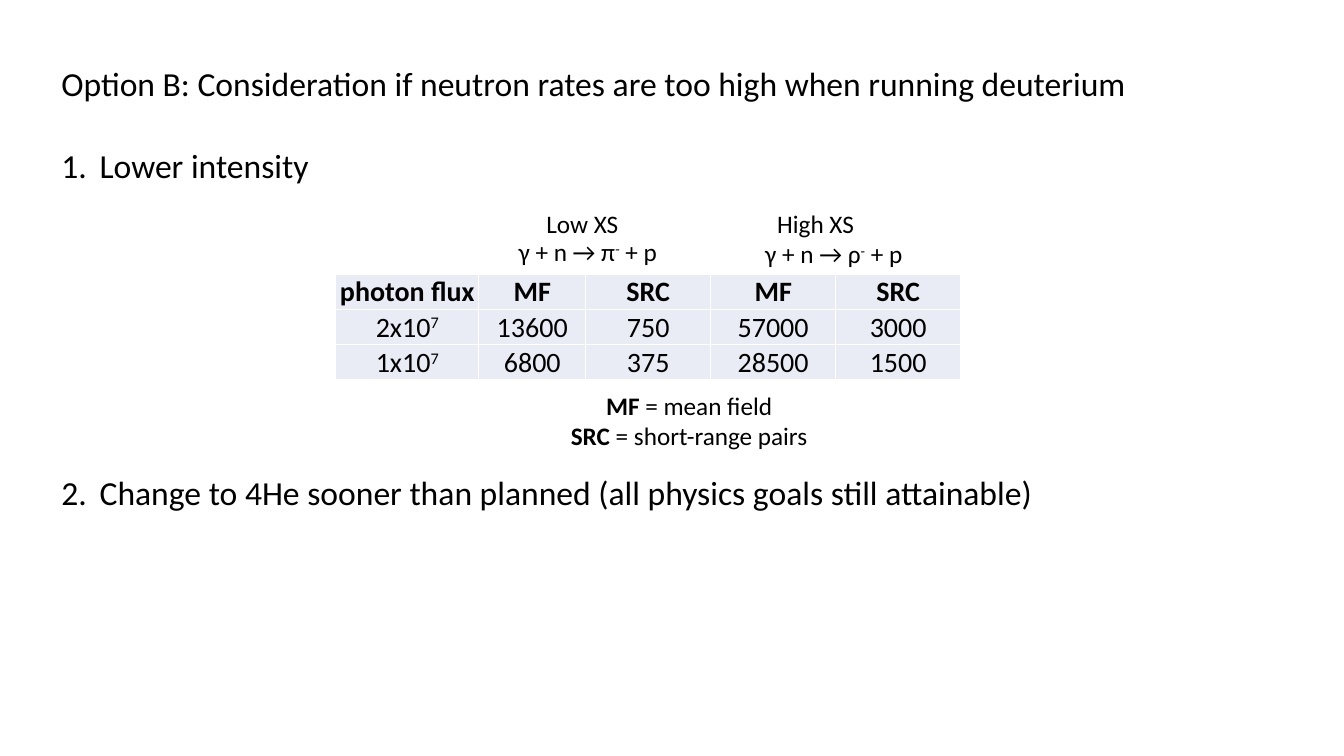
from lxml.etree import SubElement
from pptx import Presentation
from pptx.dml.color import RGBColor
from pptx.enum.text import MSO_ANCHOR, PP_ALIGN
from pptx.oxml.ns import qn
from pptx.util import Inches, Pt

COLORS = {"text": "000000", "cell": "E9EBF5", "border": "FFFFFF"}
FONT = "Calibri"
PLAIN, BOLD, SUPERSCRIPT = "plain", "bold", "superscript"

COLUMN_WIDTHS = [1.42, 1.06, 1.24, 1.24, 1.24]
ROW_HEIGHT = 0.35
RATES = [
    ["photon flux", "MF", "SRC", "MF", "SRC"],
    ["2x10^7", "13600", "750", "57000", "3000"],
    ["1x10^7", "6800", "375", "28500", "1500"],
]


def fill_paragraph(paragraph, runs, size, align=PP_ALIGN.LEFT):
    """Write (text, style) runs in the slide's font."""
    paragraph.alignment = align
    font = paragraph.font
    font.name, font.size = FONT, Pt(size)
    font.color.rgb = RGBColor.from_string(COLORS["text"])
    for text, style in runs:
        run = paragraph.add_run()
        run.text = text
        if style == BOLD:
            run.font.bold = True
        elif style == SUPERSCRIPT:
            run._r.get_or_add_rPr().set("baseline", "30000")


def add_text_box(slide, left, top, width, height, lines, size,
                 align=PP_ALIGN.LEFT, wrap=False):
    """Add one paragraph per list of runs and return the paragraphs."""
    box = slide.shapes.add_textbox(*map(Inches, (left, top, width, height)))
    frame = box.text_frame
    frame.word_wrap = wrap
    for index, runs in enumerate(lines):
        paragraph = frame.add_paragraph() if index else frame.paragraphs[0]
        fill_paragraph(paragraph, runs, size, align)
    return frame.paragraphs


def insert_before_font(paragraph, tag):
    """Add a paragraph property ahead of the default run properties."""
    properties = paragraph._p.get_or_add_pPr()
    element = SubElement(properties, qn(tag))
    properties.find(qn("a:defRPr")).addprevious(element)
    return element


def number_paragraph(paragraph):
    properties = paragraph._p.get_or_add_pPr()
    properties.set("marL", str(Inches(0.38)))
    properties.set("indent", str(-Inches(0.38)))
    insert_before_font(paragraph, "a:buFont").set("typeface", "+mj-lt")
    insert_before_font(paragraph, "a:buAutoNum").set("type", "arabicPeriod")


def set_tab_stop(paragraph, position):
    tab = SubElement(insert_before_font(paragraph, "a:tabLst"), qn("a:tab"))
    tab.set("pos", str(Inches(position)))
    tab.set("algn", "l")


def add_outline(slide):
    lines = [
        "Option B: Consideration if neutron rates are too high when running deuterium",
        "Lower intensity",
        "Change to 4He sooner than planned (all physics goals still attainable)",
    ]
    _, intensity, helium = add_text_box(
        slide, 0.51, 0.58, 10.86, 4.54, [[(line, PLAIN)] for line in lines], 24)
    for paragraph, space in ((intensity, 29.3), (helium, 205)):
        number_paragraph(paragraph)
        paragraph.space_before = Pt(space)


def add_reaction(slide, left, top, meson):
    runs = [("γ + n → " + meson, PLAIN), ("-", SUPERSCRIPT), (" + p", PLAIN)]
    paragraph, = add_text_box(slide, left, top, 1.62, 0.37, [runs], 18,
                              PP_ALIGN.CENTER)
    paragraph.line_spacing = 0.9


def style_cell(cell):
    cell.vertical_anchor = MSO_ANCHOR.MIDDLE
    cell.margin_left = cell.margin_right = cell.margin_top = Inches(0.01)
    cell.margin_bottom = 0
    properties = cell._tc.get_or_add_tcPr()
    for side in ("a:lnL", "a:lnR", "a:lnT", "a:lnB"):
        line = SubElement(properties, qn(side), w=str(Pt(1)))
        fill = SubElement(line, qn("a:solidFill"))
        SubElement(fill, qn("a:srgbClr"), val=COLORS["border"])
    cell.fill.solid()
    cell.fill.fore_color.rgb = RGBColor.from_string(COLORS["cell"])


def add_rate_table(slide):
    frame = slide.shapes.add_table(
        len(RATES), len(COLUMN_WIDTHS), Inches(3.33), Inches(2.72),
        Inches(sum(COLUMN_WIDTHS)), Inches(ROW_HEIGHT * len(RATES)))
    table = frame.table
    table.first_row = table.horz_banding = False
    for column, width in zip(table.columns, COLUMN_WIDTHS):
        column.width = Inches(width)
    for row_index, values in enumerate(RATES):
        table.rows[row_index].height = Inches(ROW_HEIGHT)
        for column_index, value in enumerate(values):
            cell = table.cell(row_index, column_index)
            style_cell(cell)
            base, _, exponent = value.partition("^")
            runs = [(base, PLAIN if row_index else BOLD)]
            if exponent:
                runs.append((exponent, SUPERSCRIPT))
            fill_paragraph(cell.text_frame.paragraphs[0], runs, 20,
                           PP_ALIGN.CENTER)


def main():
    presentation = Presentation()
    presentation.slide_width = Inches(13.33)
    presentation.slide_height = Inches(7.5)
    slide = presentation.slides.add_slide(presentation.slide_layouts[6])

    add_outline(slide)
    add_rate_table(slide)
    cross_sections, = add_text_box(slide, 5.32, 2.02, 3.59, 0.4,
                                   [[("Low XS\tHigh XS", PLAIN)]], 18, wrap=True)
    set_tab_stop(cross_sections, 2.29)
    add_reaction(slide, 5.02, 2.33, "π")
    add_reaction(slide, 7.46, 2.35, "ρ")
    legend = [
        [("MF", BOLD), (" = mean field", PLAIN)],
        [("SRC", BOLD), (" = short-range pairs", PLAIN)],
    ]
    add_text_box(slide, 5.55, 3.82, 2.57, 0.71, legend, 18, PP_ALIGN.CENTER)

    presentation.save("out.pptx")


if __name__ == "__main__":
    main()
